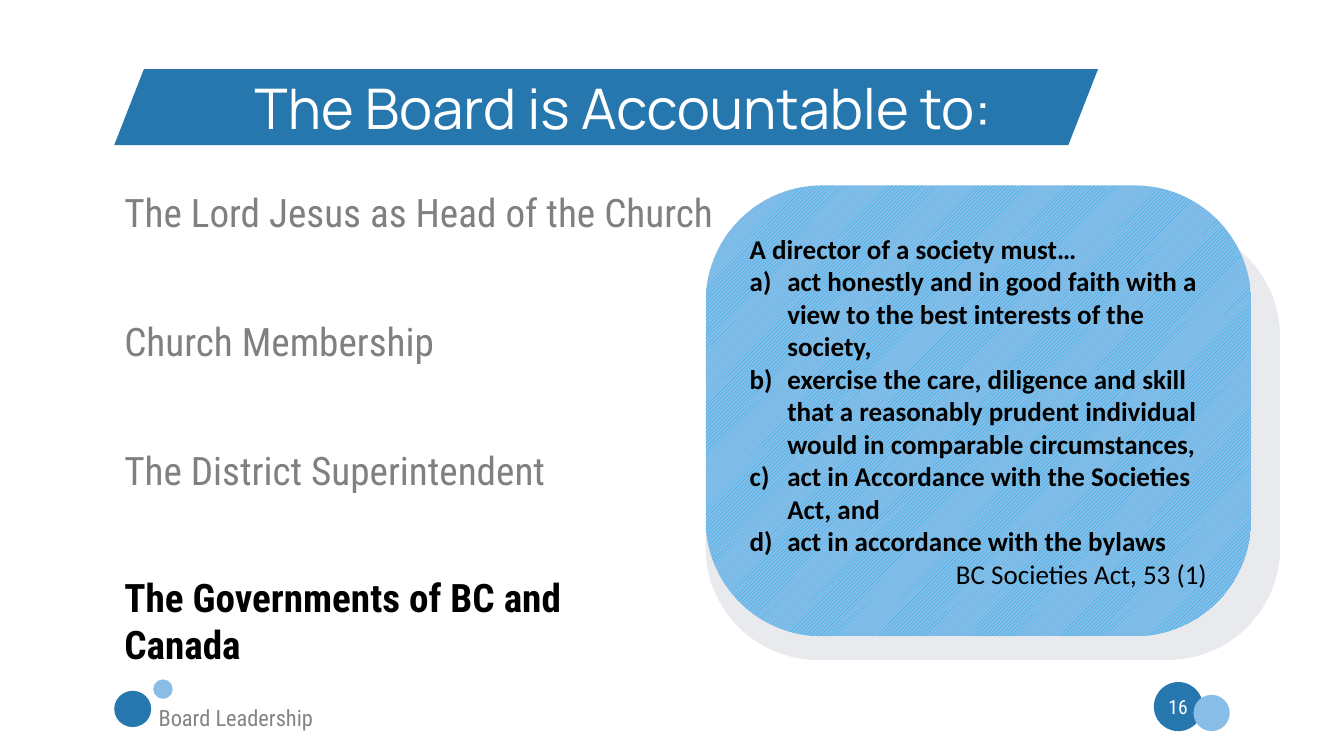
from pptx import Presentation
from pptx.dml.color import RGBColor
from pptx.enum.dml import MSO_PATTERN
from pptx.enum.shapes import MSO_SHAPE
from pptx.enum.text import MSO_ANCHOR, MSO_AUTO_SIZE, PP_ALIGN
from pptx.oxml.ns import qn
from pptx.util import Inches, Pt

OVAL, ROUND = MSO_SHAPE.OVAL, MSO_SHAPE.ROUNDED_RECTANGLE
SLANT = MSO_SHAPE.PARALLELOGRAM
STRIPES = MSO_PATTERN.WIDE_UPWARD_DIAGONAL
LEFT, CENTER, RIGHT = PP_ALIGN.LEFT, PP_ALIGN.CENTER, PP_ALIGN.RIGHT
TOP, MIDDLE = MSO_ANCHOR.TOP, MSO_ANCHOR.MIDDLE

WIDE, HIGH = Inches(20.01), Inches(11.25)
COL, ROW = WIDE / 20, HIGH / 11.25
EDGE = 1.7
BLUE, SKY, CYAN = "2677AE", "88BDE7", "00B0F0"
PALE, GRAY, DIM = "E9EAEE", "808080", "848388"
BLACK, WHITE = "000000", "FFFFFF"
SANS = "Roboto Condensed"

DUTIES = [
    "act honestly and in good faith with a view to the best interests of the society,",
    "exercise the care, diligence and skill that a reasonably prudent individual "
    "would in comparable circumstances,",
    "act in Accordance with the Societies Act, and",
    "act in accordance with the bylaws",
]


def color(code):
    return RGBColor.from_string(code)


def area(x, y, w, h):
    """Turn grid columns and rows into slide lengths."""
    return int(x * COL), int(y * ROW), int(w * COL), int(h * ROW)


def place(item, *spot):
    item.left, item.top, item.width, item.height = area(*spot)


def frame(item, anchor=TOP):
    box = item.text_frame
    box.word_wrap = True
    box.auto_size = MSO_AUTO_SIZE.NONE
    box.vertical_anchor = anchor
    box.margin_left = box.margin_right = Inches(0.15)
    box.margin_top = box.margin_bottom = Inches(0.08)
    return box


def style(line, size, tint, font=SANS, bold=False, align=LEFT, gap=0):
    line.alignment = align
    line.space_before, line.space_after = Pt(gap), Pt(0)
    for run in line.runs:
        run.font.size, run.font.name, run.font.bold = Pt(size), font, bold
        run.font.color.rgb = color(tint)


def mark(line, kind, indent=0, **attrs):
    """Set the bullet kind and its hanging indent."""
    props = line._p.get_or_add_pPr()
    props.set("marL", str(Inches(indent)))
    props.set("indent", str(-Inches(indent)))
    bullet = props.makeelement(qn(kind), attrs)
    props.append(bullet)


def shape(slide, kind, spot, fill, adjust=None):
    item = slide.shapes.add_shape(kind, *area(*spot))
    item.shadow.inherit = False
    item.fill.solid()
    item.fill.fore_color.rgb = color(fill)
    item.line.fill.background()
    if adjust is not None:
        item.adjustments[0] = adjust
    return item


def label(slide, spot, text, size, tint, align=LEFT):
    box = frame(slide.shapes.add_textbox(*area(*spot)))
    box.text = text
    style(box.paragraphs[0], size, tint, align=align)


def items(body, spot, texts, tint, gap=0, bold=False):
    place(body, *spot)
    box = frame(body)
    box.text = "\n".join(texts)
    for i, line in enumerate(box.paragraphs):
        mark(line, "a:buNone")
        style(line, 42, tint, bold=bold, gap=gap if i else 0)


def header(slide):
    bar = shape(slide, SLANT, (EDGE, 1.03, 14.64, 1.13), BLUE, 0.391)
    title = slide.shapes.title
    place(title, 3, 1.03, 11.9, 1.13)
    bar._element.addnext(title._element)
    box = frame(title, MIDDLE)
    box.text = "The Board is Accountable to:"
    style(box.paragraphs[0], 60, WHITE, "Manrope", align=RIGHT)


def panel(slide):
    shape(slide, ROUND, (10.5, 3.34, 8.55, 6.48), PALE, 0.258)
    card = shape(slide, ROUND, (10.5, 2.76, 8.12, 6.71), SKY, 0.258)
    card.fill.patterned()
    card.fill.pattern = STRIPES
    card.fill.fore_color.rgb = color(CYAN)
    card.fill.back_color.rgb = color(SKY)

    box = frame(card, MIDDLE)
    intro, source = "A director of a society must…", "BC Societies Act, 53 (1)"
    box.text = "\n".join([intro, *DUTIES, source])
    first, *duties, last = box.paragraphs
    for line in duties:
        mark(line, "a:buAutoNum", 0.56, type="alphaLcParenR")
    for line in (first, *duties):
        style(line, 29, BLACK, "Calibri", bold=True)
    style(last, 29, BLACK, "Calibri", align=RIGHT)


def footer(slide):
    shape(slide, OVAL, (17.17, 10.15, 0.73, 0.73), BLUE)
    label(slide, (17.17, 10.26, 0.72, 0.6), "16", 21, WHITE, CENTER)
    shape(slide, OVAL, (EDGE, 10.28, 0.55, 0.54), BLUE)
    label(slide, (2.21, 10.4, 2.65, 0.56), "Board Leadership", 24, DIM)
    shape(slide, OVAL, (2.28, 10.11, 0.29, 0.29), SKY)
    shape(slide, OVAL, (17.76, 10.34, 0.54, 0.54), SKY)


def main():
    deck = Presentation()
    deck.slide_width, deck.slide_height = WIDE, HIGH
    # Two Content layout: title and two bodies
    slide = deck.slides.add_slide(deck.slide_layouts[3])

    # Page marks
    footer(slide)

    # Accountability list, with the current item set apart
    others = ["The Lord Jesus as Head of the Church", "Church Membership",
              "The District Superintendent"]
    items(slide.placeholders[1], (EDGE, 2.72, 9.1, 4.72), others, GRAY, gap=88)
    items(slide.placeholders[2], (EDGE, 8.45, 8.55, 1.57),
          ["The Governments of BC and Canada"], BLACK, bold=True)

    # Duties and title
    panel(slide)
    header(slide)
    deck.save("out.pptx")


if __name__ == "__main__":
    main()
